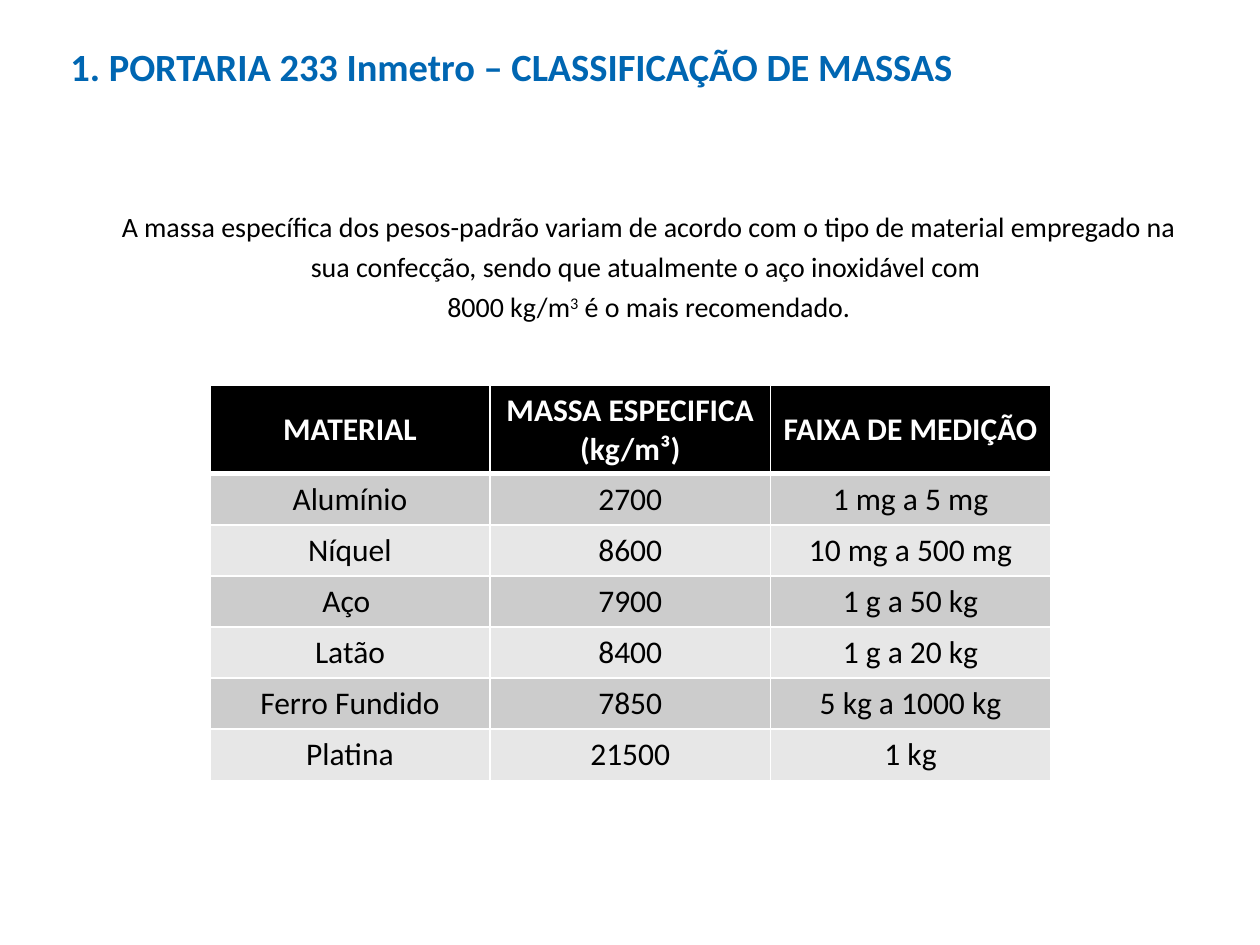
from lxml.etree import SubElement
from pptx import Presentation
from pptx.dml.color import RGBColor
from pptx.enum.text import MSO_ANCHOR as Anchor, PP_ALIGN as Align
from pptx.oxml.ns import qn
from pptx.util import Cm, Pt

HEADING = "1. PORTARIA 233 Inmetro – CLASSIFICAÇÃO DE MASSAS"
INTRO_LINES = [
    [("A massa específica dos pesos-padrão variam de acordo com o tipo de material "
      "empregado na sua confecção, sendo que atualmente o aço inoxidável com ", False)],
    [("8000 kg/m", False), ("3", True), (" é o mais recomendado.", False)],
]
MATERIALS = [
    ("MATERIAL", "MASSA ESPECIFICA\n(kg/m³)", "FAIXA DE MEDIÇÃO"),
    ("Alumínio", "2700", "1 mg a 5 mg"),
    ("Níquel", "8600", "10 mg a 500 mg"),
    ("Aço ", "7900", "1 g a 50 kg"),
    ("Latão", "8400", "1 g a 20 kg"),
    ("Ferro Fundido", "7850", "5 kg a 1000 kg"),
    ("Platina", "21500", "1 kg"),
]

FONT = "Calibri"
BLUE = RGBColor(0x00, 0x66, 0xB2)
BLACK = RGBColor(0x00, 0x00, 0x00)
WHITE = RGBColor(0xFF, 0xFF, 0xFF)
BANDS = (RGBColor(0xE7, 0xE7, 0xE7), RGBColor(0xCC, 0xCC, 0xCC))
COLUMN_WIDTH = Cm(5.65)
HEADER_HEIGHT, ROW_HEIGHT = Cm(1.78), Cm(1.03)


def style_font(font, size, color, bold=False):
    font.name = FONT
    font.size = Pt(size)
    font.bold = bold
    font.color.rgb = color


def add_text_frame(slide, left, top, width, height, anchor):
    frame = slide.shapes.add_textbox(Cm(left), Cm(top), Cm(width), Cm(height)).text_frame
    frame.word_wrap = True
    frame.vertical_anchor = anchor
    return frame


def set_borders(cell, bottom_width):
    properties = cell._tc.get_or_add_tcPr()
    widths = {"a:lnL": 1, "a:lnR": 1, "a:lnT": 1, "a:lnB": bottom_width}
    for position, (side, width) in enumerate(widths.items()):
        line = SubElement(properties, qn(side), w=str(Pt(width)))
        SubElement(SubElement(line, qn("a:solidFill")), qn("a:srgbClr"), val=str(WHITE))
        properties.insert(position, line)


def add_heading(slide):
    heading = add_text_frame(slide, 1.17, 0.51, 21.9, 1.78, Anchor.MIDDLE)
    heading.text = HEADING
    paragraph = heading.paragraphs[0]
    paragraph.line_spacing = 0.9
    style_font(paragraph.runs[0].font, 22, BLUE, True)


def add_intro(slide):
    intro = add_text_frame(slide, 2.08, 3.96, 22, 2.41, Anchor.TOP).paragraphs[0]
    intro.alignment = Align.CENTER
    intro.line_spacing = 1.2
    for number, line in enumerate(INTRO_LINES):
        if number:
            intro.add_line_break()
        for text, raised in line:
            run = intro.add_run()
            run.text = text
            style_font(run.font, 16, BLACK)
            if raised:
                run.font._element.set("baseline", "30000")


def add_materials(slide):
    row_count, column_count = len(MATERIALS), len(MATERIALS[0])
    table = slide.shapes.add_table(
        row_count, column_count, Cm(4.23), Cm(7.77), COLUMN_WIDTH * column_count,
        HEADER_HEIGHT + ROW_HEIGHT * (row_count - 1)).table
    for column in table.columns:
        column.width = COLUMN_WIDTH
    for row_number, (row, values) in enumerate(zip(table.rows, MATERIALS)):
        is_header = row_number == 0
        row.height = HEADER_HEIGHT if is_header else ROW_HEIGHT
        for cell, value in zip(row.cells, values):
            cell.text_frame.text = value
            cell.vertical_anchor = Anchor.MIDDLE
            cell.fill.solid()
            cell.fill.fore_color.rgb = BLACK if is_header else BANDS[row_number % 2]
            set_borders(cell, 3 if is_header else 1)
            for paragraph in cell.text_frame.paragraphs:
                paragraph.alignment = Align.CENTER
                style_font(paragraph.runs[0].font, 18, WHITE if is_header else BLACK, is_header)


def main():
    deck = Presentation()
    deck.slide_width, deck.slide_height = Cm(25.4), Cm(19.05)
    slide = deck.slides.add_slide(deck.slide_layouts[6])
    add_intro(slide)
    add_heading(slide)
    add_materials(slide)
    deck.save("out.pptx")


if __name__ == "__main__":
    main()
